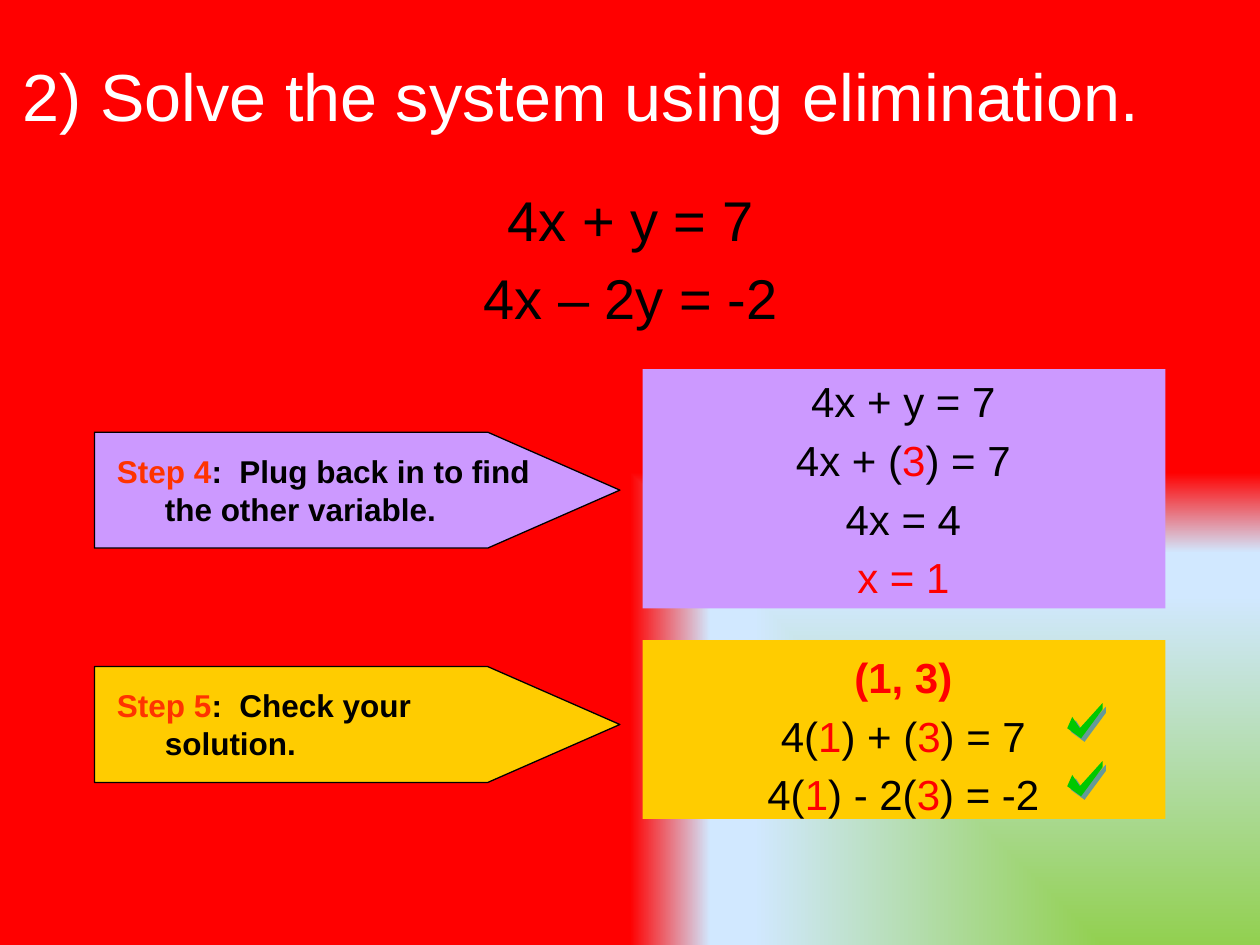
"""Build the slide that finishes a system of equations by elimination."""
from dataclasses import dataclass

import lxml.etree
import pptx
import pptx.dml.color
import pptx.enum.shapes
import pptx.enum.text
import pptx.oxml
import pptx.oxml.ns
import pptx.util

Inches = pptx.util.Inches
SHAPE = pptx.enum.shapes.MSO_SHAPE
ALIGN = pptx.enum.text.PP_ALIGN
ANCHOR = pptx.enum.text.MSO_ANCHOR
NS = pptx.oxml.ns.nsdecls("a", "p")

COLORS = {
    "black": "000000", "white": "FFFFFF", "red": "FF0000", "step": "FF3300",
    "purple": "CC99FF", "gold": "FFCC00", "green": "92D050", "sky": "D1E8FF",
    "check": "00C800", "check_shadow": "669999",
}
BACKGROUND_STOPS = [(0, "green"), (74, "sky"), (83, "sky"), (100, "red")]
CHECK_OUTLINE = [(4, 11), (0, 20), (11, 28), (28, 5), (28, 0), (10, 20)]


@dataclass
class Run:
    text: str
    color: str = "black"
    bold: bool = False


@dataclass
class Step:
    label: str
    instruction: str
    fill: str
    arrow_top: float
    panel_top: float
    panel_height: float
    work_top: float
    work_height: float
    work_indent: float
    work_anchor: ANCHOR
    work: list[list[Run]]


STEPS = [
    Step("Step 4", ":  Plug back in to find the other variable.", "purple",
         3.43, 2.93, 1.9, 2.93, 1.9, 0.67, ANCHOR.MIDDLE,
         [[Run("4x + y = 7")],
          [Run("4x + ("), Run("3", "red"), Run(") = 7")],
          [Run("4x = 4")],
          [Run("x = 1", "red")]]),
    Step("Step 5", ":  Check your solution.", "gold",
         5.29, 5.08, 1.42, 5.12, 1.25, 0.38, ANCHOR.TOP,
         [[Run("(1, 3)", "red", True)],
          [Run("4("), Run("1", "red"), Run(") + ("), Run("3", "red"), Run(") = 7")],
          [Run("4("), Run("1", "red"), Run(") - 2("), Run("3", "red"), Run(") = -2")]]),
]


def rgb(name: str) -> pptx.dml.color.RGBColor:
    """Return the named colour."""
    return pptx.dml.color.RGBColor.from_string(COLORS[name])


def write_text(frame, paragraphs: list[list[Run]], *, size: float,
               align=ALIGN.LEFT, anchor=ANCHOR.TOP, hanging: float = 0,
               before_percent: int = 0) -> None:
    """Fill a text frame with formatted paragraphs."""
    frame.word_wrap = True
    frame.auto_size = pptx.enum.text.MSO_AUTO_SIZE.NONE
    frame.vertical_anchor = anchor
    for index, runs in enumerate(paragraphs):
        paragraph = frame.add_paragraph() if index else frame.paragraphs[0]
        paragraph.alignment = align
        properties = paragraph._p.get_or_add_pPr()
        if hanging:
            properties.set("marL", str(Inches(hanging)))
            properties.set("indent", str(-Inches(hanging)))
        if before_percent:
            properties.append(pptx.oxml.parse_xml(
                f'<a:spcBef {NS}><a:spcPct val="{before_percent * 1000}"/></a:spcBef>'))
        for part in runs:
            run = paragraph.add_run()
            run.text = part.text
            run.font.name = "Arial"
            run.font.size = pptx.util.Pt(size)
            run.font.bold = part.bold
            run.font.color.rgb = rgb(part.color)


def add_text(slide, left: float, top: float, width: float, height: float,
             paragraphs: list[list[Run]], **text_format) -> None:
    """Add a text box."""
    box = slide.shapes.add_textbox(*map(Inches, (left, top, width, height)))
    write_text(box.text_frame, paragraphs, **text_format)


def add_block(slide, kind, left: float, top: float, width: float,
              height: float, fill: str):
    """Add a flat filled shape without an outline."""
    block = slide.shapes.add_shape(kind, *map(Inches, (left, top, width, height)))
    block.shadow.inherit = False
    block.fill.solid()
    block.fill.fore_color.rgb = rgb(fill)
    block.line.fill.background()
    return block


def add_step(slide, step: Step) -> None:
    """Add a step arrow and the panel with its working."""
    arrow = add_block(slide, SHAPE.PENTAGON, 0.75, step.arrow_top, 4.17, 0.92, step.fill)
    arrow.adjustments[0] = 1.14
    arrow.line.color.rgb = rgb("black")
    arrow.line.width = pptx.util.Pt(0.75)
    add_text(slide, 0.83, step.arrow_top + 0.08, 3.58, 0.75,
             [[Run(step.label, "step", True), Run(step.instruction, bold=True)]],
             size=18, anchor=ANCHOR.MIDDLE, hanging=0.38)
    add_block(slide, SHAPE.RECTANGLE, 5.1, step.panel_top, 4.15, step.panel_height, step.fill)
    add_text(slide, 5.17, step.work_top, 4, step.work_height, step.work, size=24,
             align=ALIGN.CENTER, anchor=step.work_anchor,
             hanging=step.work_indent, before_percent=20)


def add_check(slide, left: float, top: float) -> None:
    """Add a green check mark with an offset shadow."""
    builder = slide.shapes.build_freeform(*CHECK_OUTLINE[0], scale=Inches(0.01))
    builder.add_line_segments(CHECK_OUTLINE[1:], close=True)
    check = builder.convert_to_shape(Inches(left), Inches(top))
    check.fill.solid()
    check.fill.fore_color.rgb = rgb("check")
    check.line.fill.background()
    check.shadow.inherit = False
    effects = check._element.spPr.find(pptx.oxml.ns.qn("a:effectLst"))
    effects.append(pptx.oxml.parse_xml(
        f'<a:outerShdw {NS} dist="{pptx.util.Pt(2.8)}" dir="2700000" algn="ctr" '
        f'rotWithShape="0"><a:srgbClr val="{COLORS["check_shadow"]}"/></a:outerShdw>'))


def paint_background(slide) -> None:
    """Give the slide a rectangular gradient centred on its lower right corner."""
    slide.background.fill.gradient()
    gradient = slide._element.cSld.find(".//" + pptx.oxml.ns.qn("a:gradFill"))
    stops = "".join(
        f'<a:gs pos="{position * 1000}"><a:srgbClr val="{COLORS[color]}"/></a:gs>'
        for position, color in BACKGROUND_STOPS)
    replacement = pptx.oxml.parse_xml(
        f'<a:gradFill {NS} rotWithShape="1"><a:gsLst>{stops}</a:gsLst>'
        '<a:path path="rect"><a:fillToRect l="100000" t="100000"/></a:path></a:gradFill>')
    gradient.getparent().replace(gradient, replacement)


def main() -> None:
    """Build and save the slide."""
    deck = pptx.Presentation()
    deck.slide_width, deck.slide_height = Inches(10), Inches(7.5)
    slide = deck.slides.add_slide(deck.slide_layouts[5])
    paint_background(slide)
    title = slide.shapes.title
    title.left, title.top, title.width, title.height = map(Inches, (0.08, 0.25, 9.08, 1))
    write_text(title.text_frame, [[Run("2) Solve the system using elimination.", "white")]],
               size=38, anchor=ANCHOR.MIDDLE)
    for step in STEPS:
        add_step(slide, step)
    for check_top in (5.58, 6.04):
        add_check(slide, 8.47, check_top)
    add_text(slide, 0.67, 1.42, 8.67, 5, [[Run("4x + y = 7")], [Run("4x – 2y = -2")]],
             size=32, align=ALIGN.CENTER, hanging=0.38, before_percent=20)
    deck.save("out.pptx")


if __name__ == "__main__":
    main()
